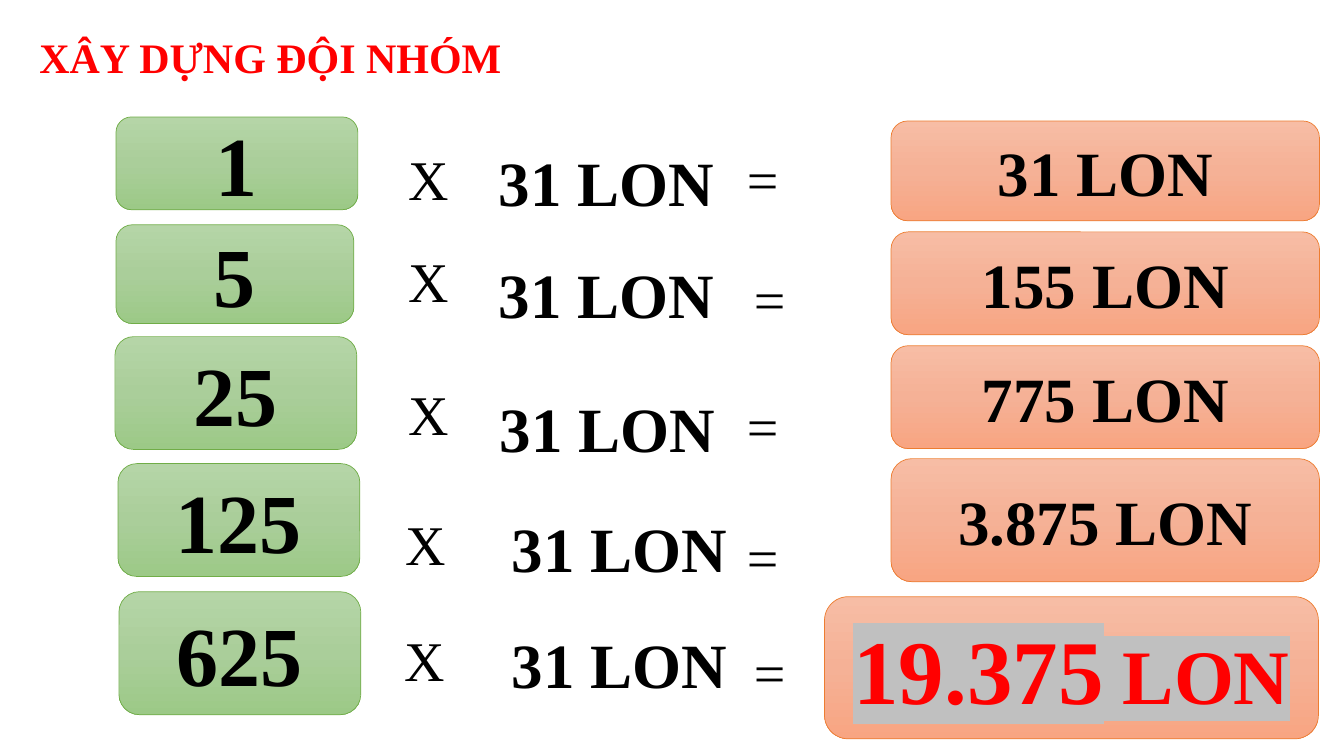
import copy
from dataclasses import dataclass

import lxml.etree
import pptx
import pptx.dml.color
import pptx.enum.shapes
import pptx.enum.text
import pptx.oxml.ns
import pptx.util

RGBColor = pptx.dml.color.RGBColor
BLACK = RGBColor(0x00, 0x00, 0x00)
RED = RGBColor(0xFF, 0x00, 0x00)
SILVER = RGBColor(0xC0, 0xC0, 0xC0)
GREEN_LINE = RGBColor(0x70, 0xAD, 0x47)
GREEN_STOPS = (RGBColor(0xB5, 0xD5, 0xA7), RGBColor(0xAA, 0xCE, 0x9A), RGBColor(0x9C, 0xC9, 0x87))
ORANGE_LINE = RGBColor(0xED, 0x7D, 0x31)
ORANGE_STOPS = (RGBColor(0xF7, 0xBD, 0xA5), RGBColor(0xF5, 0xB1, 0x96), RGBColor(0xF8, 0xA5, 0x82))

FONT_NAME = "Times New Roman"
SLIDE_WIDTH = pptx.util.Inches(13.333)
SLIDE_HEIGHT = pptx.util.Inches(7.5)
TITLE_ONLY_LAYOUT = 5


@dataclass(frozen=True)
class Box:
    """A rectangle in percent of the slide's width and height."""
    left: float
    top: float
    width: float
    height: float


@dataclass(frozen=True)
class Run:
    text: str
    size: int
    bold: bool = True
    color: RGBColor = BLACK
    highlight: RGBColor | None = None


@dataclass(frozen=True)
class CardStyle:
    stops: tuple[RGBColor, ...]
    line: RGBColor


@dataclass(frozen=True)
class TeamRow:
    """One multiplication: members X cans each = total."""
    members: str
    members_box: Box
    times_at: tuple[float, float]
    cans_at: tuple[float, float]
    equals_at: tuple[float, float]
    total: tuple[Run, ...]
    total_box: Box


GREEN_CARD = CardStyle(GREEN_STOPS, GREEN_LINE)
ORANGE_CARD = CardStyle(ORANGE_STOPS, ORANGE_LINE)
TITLE_BOX = Box(2.18, 3.47, 36.53, 8)
TIMES_SIZE = (5.55, 10.27)
CANS_SIZE = (19.05, 11.47)
EQUALS_SIZE = (6, 10.27)

TEAM_ROWS = (
    TeamRow("1", Box(8.63, 15.47, 18, 12.27), (29.63, 18.4), (36.38, 18.27), (54.83, 18.4),
            (Run("31 LON", 45),), Box(66.3, 16, 31.88, 13.2)),
    TeamRow("5", Box(8.63, 29.73, 17.7, 13.07), (29.63, 32), (36.38, 33.2), (55.35, 34.4),
            (Run("155 LON", 45),), Box(66.3, 30.67, 31.88, 13.6)),
    TeamRow("25", Box(8.55, 44.53, 18, 14.93), (29.63, 49.6), (36.45, 50.8), (54.83, 51.07),
            (Run("775 LON", 45),), Box(66.3, 45.73, 31.88, 13.6)),
    TeamRow("125", Box(8.78, 61.33, 18, 14.93), (29.4, 66.8), (37.35, 66.8), (54.83, 68.4),
            (Run("3.875 LON", 45),), Box(66.3, 60.67, 31.88, 16.27)),
    TeamRow("625", Box(8.85, 78.27, 18, 16.27), (29.33, 82.13), (37.35, 82.13), (55.35, 83.73),
            (Run("19.375", 65, color=RED, highlight=SILVER),
             Run(" LON", 55, color=RED, highlight=SILVER)),
            Box(61.35, 78.93, 36.75, 18.8)),
)


def set_attributes(target: object, values: dict) -> None:
    for name, value in values.items():
        setattr(target, name, value)


def to_lengths(box: Box) -> dict[str, int]:
    return {
        "left": round(SLIDE_WIDTH * box.left / 100),
        "top": round(SLIDE_HEIGHT * box.top / 100),
        "width": round(SLIDE_WIDTH * box.width / 100),
        "height": round(SLIDE_HEIGHT * box.height / 100),
    }


def add_highlight(font_run, color: RGBColor) -> None:
    """Put a highlight right after the run's fill, where the schema wants it."""
    qn = pptx.oxml.ns.qn
    highlight = lxml.etree.Element(qn("a:highlight"))
    lxml.etree.SubElement(highlight, qn("a:srgbClr"), val=str(color))
    font_run.font._element.find(qn("a:solidFill")).addnext(highlight)


def write_runs(shape, runs: tuple[Run, ...], alignment, frame_format: dict) -> None:
    set_attributes(shape.text_frame, {"word_wrap": True} | frame_format)
    paragraph = shape.text_frame.paragraphs[0]
    paragraph.alignment = alignment
    for run in runs:
        font_run = paragraph.add_run()
        font_run.text = run.text
        set_attributes(font_run.font, {
            "name": FONT_NAME, "size": pptx.util.Pt(run.size), "bold": run.bold})
        font_run.font.color.rgb = run.color
        if run.highlight is not None:
            add_highlight(font_run, run.highlight)


def fill_gradient(shape, colors: tuple[RGBColor, ...]) -> None:
    """Fill from top to bottom with three evenly spaced stops."""
    shape.fill.gradient()
    shape.fill.gradient_angle = 270
    stop_list = next(shape.element.spPr.iter(pptx.oxml.ns.qn("a:gsLst")))
    stop_list.insert(1, copy.deepcopy(stop_list[0]))
    for index, (stop, color) in enumerate(zip(shape.fill.gradient_stops, colors)):
        stop.position = index / (len(colors) - 1)
        stop.color.rgb = color


def add_card(slide, box: Box, runs: tuple[Run, ...], style: CardStyle) -> None:
    card = slide.shapes.add_shape(
        pptx.enum.shapes.MSO_SHAPE.ROUNDED_RECTANGLE, **to_lengths(box))
    card.shadow.inherit = False
    fill_gradient(card, style.stops)
    card.line.color.rgb = style.line
    card.line.width = pptx.util.Pt(0.5)
    write_runs(card, runs, pptx.enum.text.PP_ALIGN.CENTER,
               {"vertical_anchor": pptx.enum.text.MSO_ANCHOR.MIDDLE})


def add_label(slide, position: tuple[float, float], size: tuple[float, float], run: Run) -> None:
    label = slide.shapes.add_textbox(**to_lengths(Box(*position, *size)))
    write_runs(label, (run,), pptx.enum.text.PP_ALIGN.LEFT,
               {"auto_size": pptx.enum.text.MSO_AUTO_SIZE.SHAPE_TO_FIT_TEXT})


def add_title(slide) -> None:
    title = slide.shapes.title
    set_attributes(title, to_lengths(TITLE_BOX))
    write_runs(title, (Run("XÂY DỰNG ĐỘI NHÓM", 30, color=RED),),
               pptx.enum.text.PP_ALIGN.LEFT,
               {"vertical_anchor": pptx.enum.text.MSO_ANCHOR.TOP,
                "auto_size": pptx.enum.text.MSO_AUTO_SIZE.NONE})


def add_team_row(slide, row: TeamRow) -> None:
    add_card(slide, row.members_box, (Run(row.members, 60),), GREEN_CARD)
    add_label(slide, row.times_at, TIMES_SIZE, Run("X", 40, bold=False))
    add_label(slide, row.cans_at, CANS_SIZE, Run("31 LON", 45))
    add_label(slide, row.equals_at, EQUALS_SIZE, Run("=", 40, bold=False))
    add_card(slide, row.total_box, row.total, ORANGE_CARD)


def main() -> None:
    presentation = pptx.Presentation()
    set_attributes(presentation, {"slide_width": SLIDE_WIDTH, "slide_height": SLIDE_HEIGHT})
    slide = presentation.slides.add_slide(presentation.slide_layouts[TITLE_ONLY_LAYOUT])
    add_title(slide)
    for row in TEAM_ROWS:
        add_team_row(slide, row)
    presentation.save("out.pptx")


if __name__ == "__main__":
    main()
